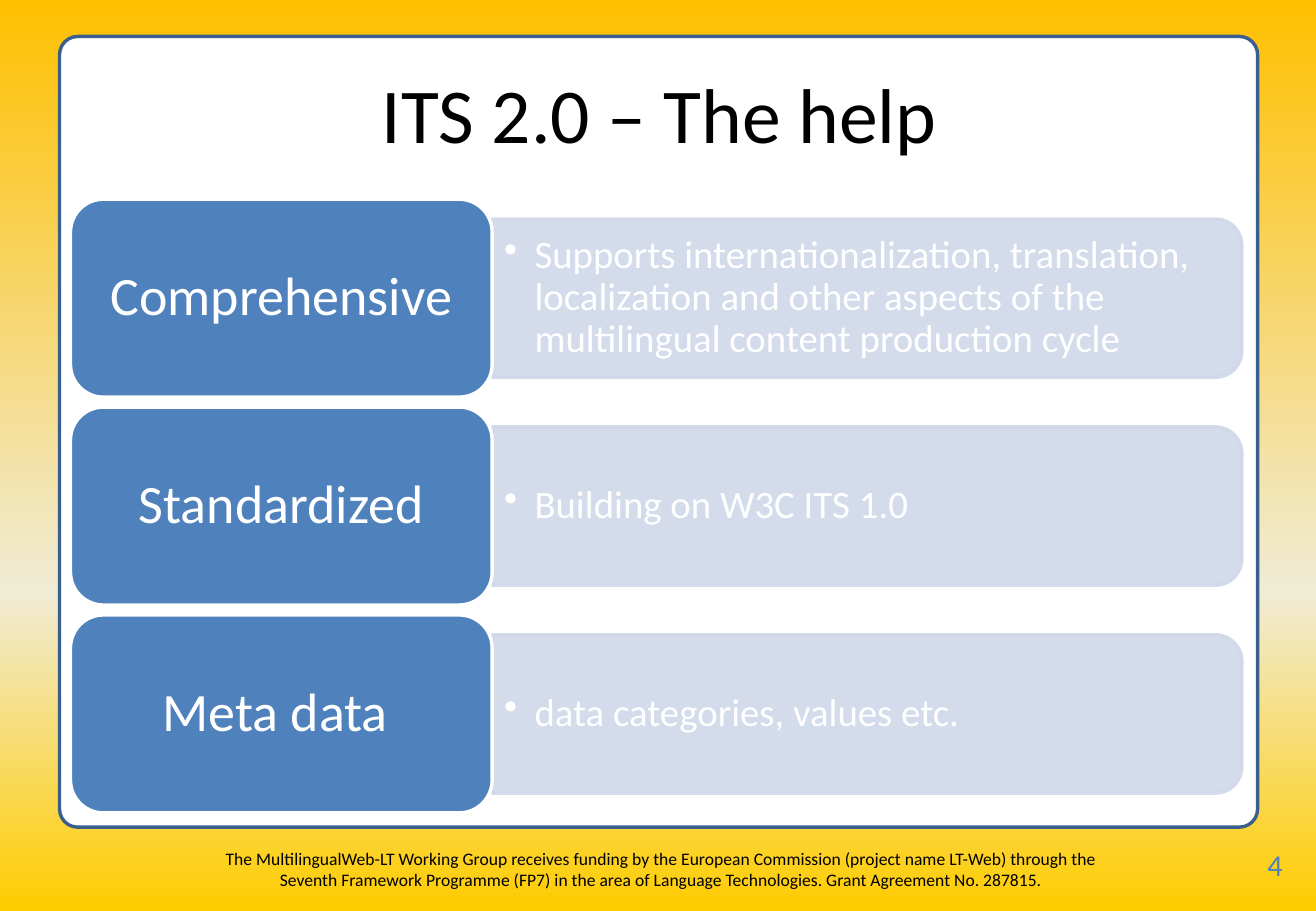
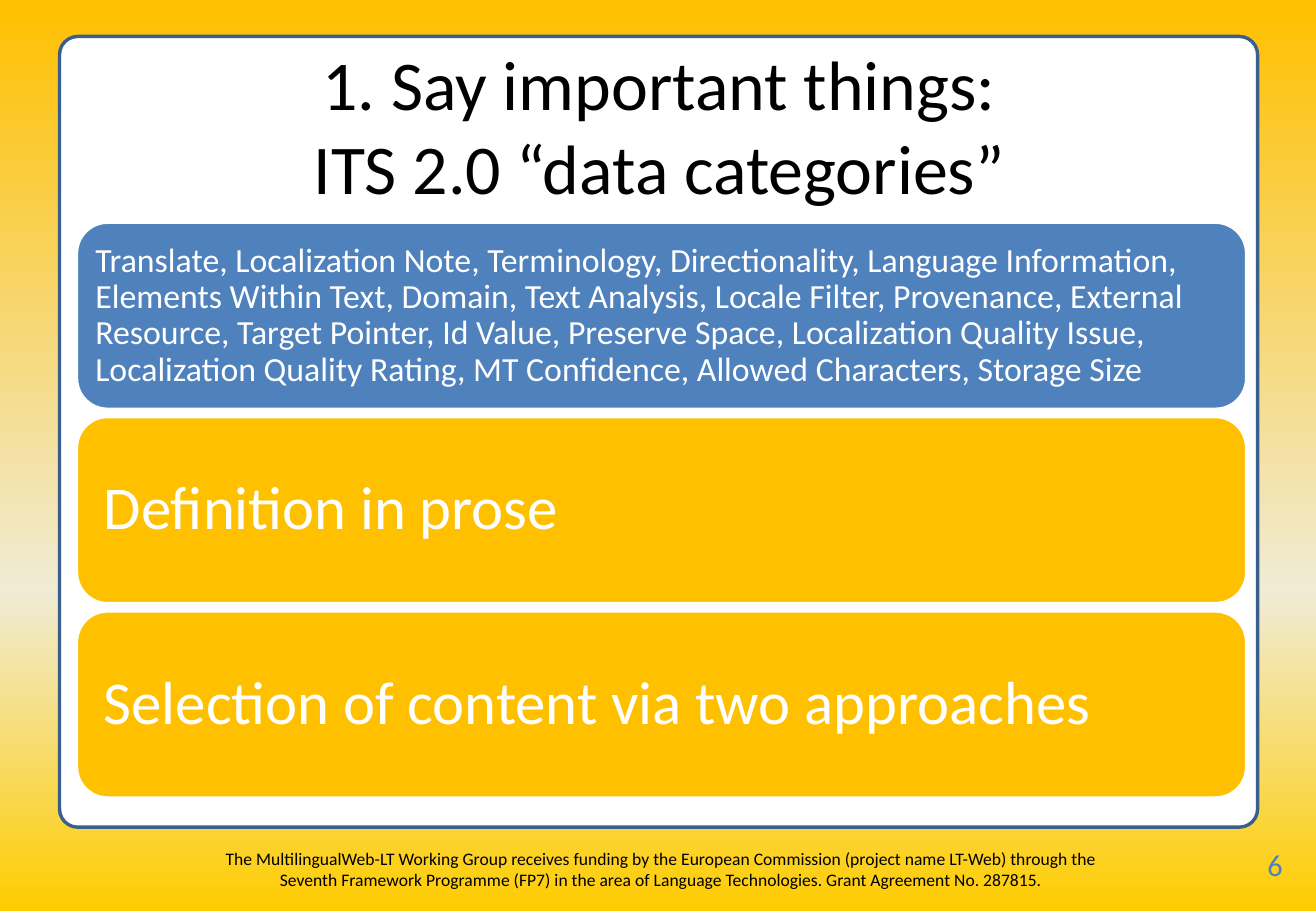
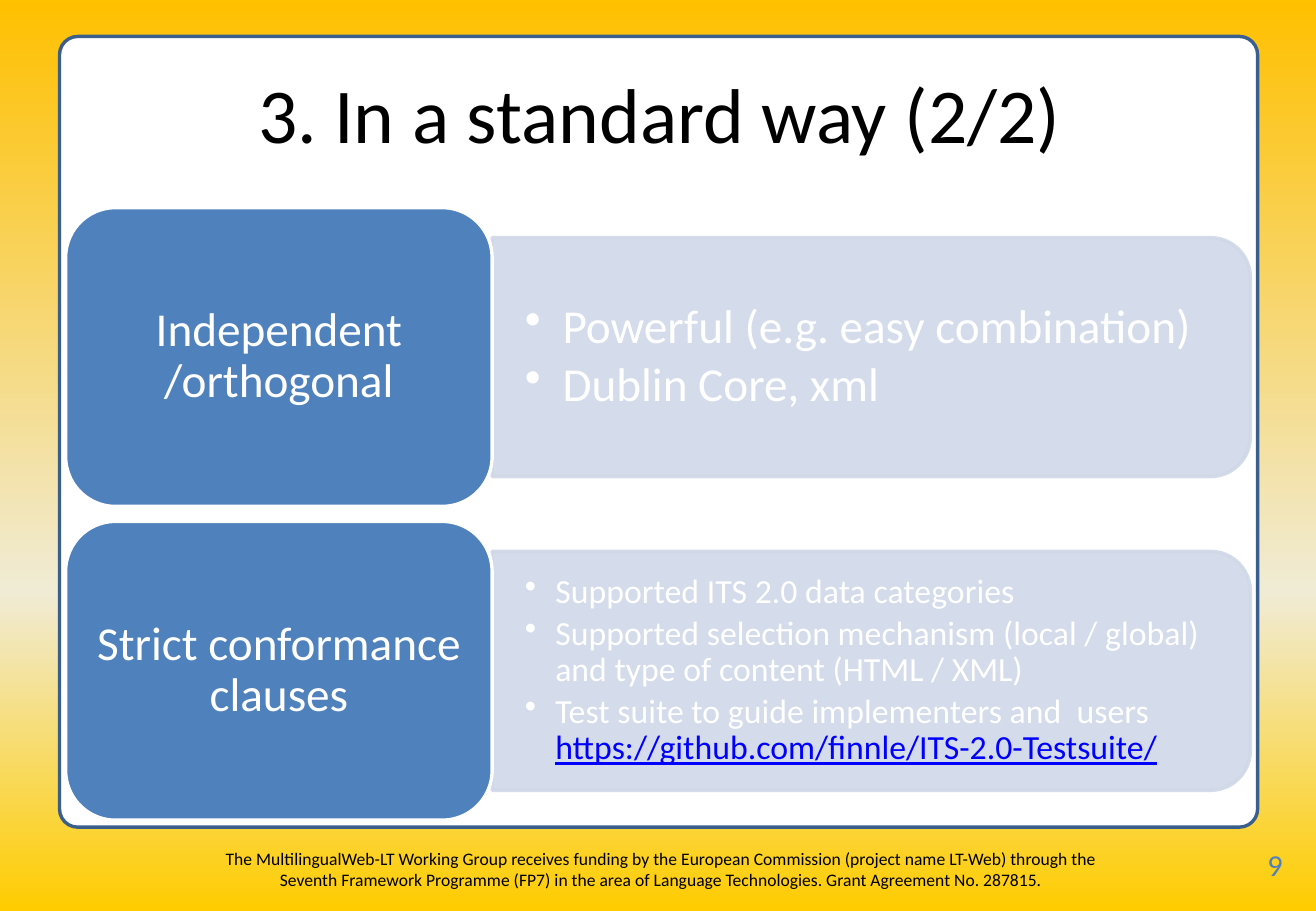
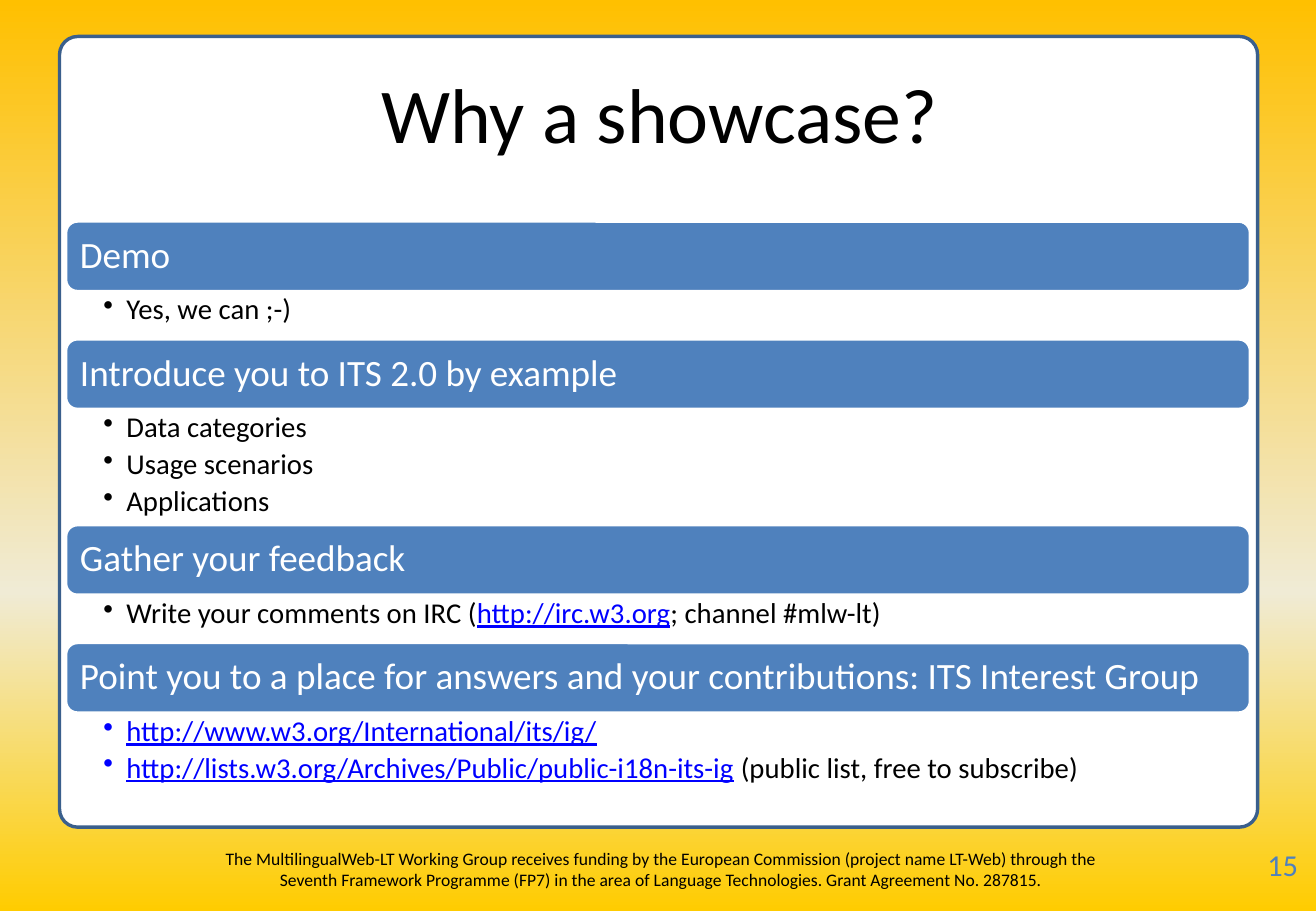
from dataclasses import dataclass

from lxml import etree
from pptx import Presentation
from pptx.dml.color import RGBColor
from pptx.enum.shapes import MSO_SHAPE
from pptx.enum.text import MSO_ANCHOR, PP_ALIGN
from pptx.oxml.ns import qn
from pptx.util import Inches, Pt

ROUNDED = MSO_SHAPE.ROUNDED_RECTANGLE
ROUNDED_TOP = MSO_SHAPE.ROUND_2_SAME_RECTANGLE
CENTER, LEFT = PP_ALIGN.CENTER, PP_ALIGN.LEFT
MIDDLE, TOP = MSO_ANCHOR.MIDDLE, MSO_ANCHOR.TOP


@dataclass(frozen=True)
class Theme:
    font: str = "Calibri"
    black: str = "000000"
    white: str = "FFFFFF"
    blue: str = "4F81BD"
    frame: str = "3A5F8C"
    amber: str = "FFC000"
    pale: str = "D0D8E8"
    link: str = "0000FF"
    backdrop: tuple = ((0, "FFC000"), (65, "F0EBD5"), (100, "FFCC00"))
    pale_opacity: int = 90
    title_size: float = 46
    long_title_size: float = 41.4
    footer_size: float = 10.4
    number_size: float = 18
    line_width: float = 2


THEME = Theme()

# Content: a paragraph is a string or a list of runs
FOOTER = (
    "The MultilingualWeb-LT Working Group receives funding by the European "
    "Commission (project name LT-Web) through the Seventh Framework Programme "
    "(FP7) in the area of Language Technologies. Grant Agreement No. 287815."
)

HELP_ROWS = [
    ("Comprehensive", 23, [
        "Supports internationalization, translation, localization and other "
        "aspects of the multilingual content production cycle"]),
    ("Standardized", 23, ["Building on W3C ITS 1.0"]),
    ("Meta data ", 23, ["data categories, values etc."]),
]

# Text, size, inset, fill
CATEGORY_BLOCKS = [
    ("Translate, Localization Note, Terminology, Directionality, Language "
     "Information, Elements Within Text, Domain, Text Analysis, Locale Filter, "
     "Provenance, External Resource, Target Pointer, Id Value, Preserve Space, "
     "Localization Quality Issue, Localization Quality Rating, MT Confidence, "
     "Allowed Characters, Storage Size", 20, 0.08, THEME.blue),
    ("Definition in prose", 36, 0.15, THEME.amber),
    ("Selection of content via two approaches", 36, 0.15, THEME.amber),
]

STANDARD_ROWS = [
    ("Independent\n/orthogonal", 28, [
        "Powerful (e.g. easy combination)",
        "Dublin Core, xml"]),
    ("Strict conformance clauses", 20, [
        "Supported ITS 2.0 data categories",
        "Supported selection mechanism (local / global) and type of content "
        "(HTML / XML)",
        ["Test suite to guide implementers and  users ",
         "https://github.com/finnle/ITS-2.0-Testsuite/"]]),
]

# Heading, height of the list below it, list
SHOWCASE_SECTIONS = [
    ("Demo", 0.39, ["Yes, we can ;-)"]),
    ("Introduce you to ITS 2.0 by example", 0.95,
     ["Data categories", "Usage scenarios", "Applications"]),
    ("Gather your feedback", 0.39,
     [["Write your comments on IRC (", "http://irc.w3.org",
       "; channel #mlw-lt)"]]),
    ("Point you to a place for answers and your contributions: "
     "ITS Interest Group", 0.63,
     ["http://www.w3.org/International/its/ig/",
      ["http://lists.w3.org/Archives/Public/public-i18n-its-ig",
       " (public list, free to subscribe)"]]),
]


# Drawing helpers
def add_block(slide, kind, box, fill, line, opacity=None):
    shape = slide.shapes.add_shape(kind, *map(Inches, box))
    shape.shadow.inherit = False
    shape.fill.solid()
    shape.fill.fore_color.rgb = RGBColor.from_string(fill)
    shape.line.color.rgb = RGBColor.from_string(line)
    shape.line.width = Pt(THEME.line_width)
    if opacity is not None:
        for color in shape._element.spPr.iter(qn("a:srgbClr")):
            etree.SubElement(color, qn("a:alpha"), val=str(opacity * 1000))
    return shape


def set_bullet(paragraph, indent):
    properties = paragraph._p.get_or_add_pPr()
    properties.set("marL", str(Inches(indent)))
    properties.set("indent", str(-Inches(indent)))
    etree.SubElement(properties, qn("a:buChar"), char="•")


def add_run(paragraph, text, size, color):
    is_link = text.startswith("http")
    run = paragraph.add_run()
    run.text = text
    run.font.color.rgb = RGBColor.from_string(THEME.link if is_link else color)
    values = {"name": THEME.font, "size": Pt(size), "underline": is_link or None}
    for name, value in values.items():
        setattr(run.font, name, value)


def write(shape, paragraphs, size, color, insets=(0.1, 0.05), anchor=MIDDLE,
          align=LEFT, line_spacing=None, after=0, bullet=None):
    """Fill a shape with text; after is a share of the type size."""
    frame = shape.text_frame
    horizontal, vertical = map(Inches, insets)
    frame_format = {
        "word_wrap": True, "vertical_anchor": anchor,
        "margin_left": horizontal, "margin_right": horizontal,
        "margin_top": vertical, "margin_bottom": vertical,
    }
    for name, value in frame_format.items():
        setattr(frame, name, value)
    for index, content in enumerate(paragraphs):
        paragraph = frame.add_paragraph() if index else frame.paragraphs[0]
        if bullet:
            set_bullet(paragraph, bullet)
        paragraph.alignment = align
        paragraph.line_spacing = line_spacing
        paragraph.space_after = Pt(round(size * after, 1))
        for text in [content] if isinstance(content, str) else content:
            for number, part in enumerate(text.split("\n")):
                if number:
                    paragraph.add_line_break()
                add_run(paragraph, part, size, color)


def add_text(slide, box, *args, **options):
    shape = slide.shapes.add_textbox(*map(Inches, box))
    write(shape, *args, **options)
    return shape


# Parts that every slide shares
def set_backdrop(master):
    fill = master.background.fill
    fill.gradient()
    fill.gradient_angle = 270
    stops = master.element.find(".//" + qn("a:gsLst"))
    for stop in list(stops):
        stops.remove(stop)
    for position, color in THEME.backdrop:
        stop = etree.SubElement(stops, qn("a:gs"), pos=str(position * 1000))
        etree.SubElement(stop, qn("a:srgbClr"), val=color)


def add_base(presentation, title, number, title_top=0.3,
             title_size=THEME.title_size):
    slide = presentation.slides.add_slide(presentation.slide_layouts[6])
    card = add_block(slide, ROUNDED, (0.49, 0.3, 9.86, 6.51),
                     THEME.white, THEME.frame)
    card.adjustments[0] = 0.023
    add_text(slide, (1.62, 6.93, 7.64, 0.4), [FOOTER], THEME.footer_size,
             THEME.black, anchor=TOP, align=CENTER)
    add_text(slide, (0.51, title_top, 9.83, 1.25), [title], title_size,
             THEME.black, align=CENTER)
    add_text(slide, (10.41, 6.96, 0.44, 0.4), [str(number)],
             THEME.number_size, THEME.blue, insets=(0.02, 0.01), anchor=TOP)
    return slide


# Slide bodies
def add_label_rows(slide, rows, left, top, width, height, label_size,
                   label_insets, panel_insets):
    """Draw label blocks, each with a pale panel of bullets to its right."""
    label_width, panel_width = 0.36 * width, 0.64 * width
    panel_height = 0.8 * height
    corner = 0.05 * panel_height
    panel_left = left + label_width
    for index, (label, size, bullets) in enumerate(rows):
        row_top = top + index * 1.05 * height
        middle = row_top + height / 2
        # The panel is a tall-corner shape turned a quarter about its centre
        panel = add_block(
            slide, ROUNDED_TOP,
            (panel_left + (panel_width - panel_height) / 2,
             middle - panel_width / 2, panel_height, panel_width),
            THEME.pale, THEME.pale, THEME.pale_opacity)
        panel.rotation = 90
        add_text(slide,
                 (panel_left, middle - panel_height / 2 + corner,
                  panel_width - corner, panel_height - 2 * corner),
                 bullets, size, THEME.white, insets=panel_insets,
                 line_spacing=0.9, after=0.15,
                 bullet=0.31 if size > 25 else 0.25)
        block = add_block(slide, ROUNDED, (left, row_top, label_width, height),
                          THEME.blue, THEME.white)
        write(block, [label], label_size, THEME.white, insets=label_insets,
              align=CENTER, line_spacing=0.9, after=0.35)


def add_category_blocks(slide):
    height, gap = 1.54, 0.06
    for index, (text, size, inset, fill) in enumerate(CATEGORY_BLOCKS):
        box = (0.63, 1.83 + index * (height + gap), 9.63, height)
        block = add_block(slide, ROUNDED, box, fill, THEME.white)
        write(block, [text], size, THEME.white, insets=(inset, inset),
              line_spacing=0.9, after=0.35)


def add_showcase_sections(slide):
    left, top, width, bar_height = 0.54, 1.82, 9.75, 0.58
    for heading, list_height, bullets in SHOWCASE_SECTIONS:
        bar = add_block(slide, ROUNDED, (left, top, width, bar_height),
                        THEME.blue, THEME.white)
        write(bar, [heading], 22, THEME.white, insets=(0.09, 0.09),
              line_spacing=0.9, after=0.35)
        top += bar_height
        add_text(slide, (left, top, width, list_height), bullets, 17,
                 THEME.black, insets=(0.31, 0.03), anchor=TOP,
                 line_spacing=0.9, after=0.2, bullet=0.19)
        top += list_height


def main():
    presentation = Presentation()
    presentation.slide_width = Inches(10.83)
    presentation.slide_height = Inches(7.5)
    set_backdrop(presentation.slide_master)

    slide = add_base(presentation, "ITS 2.0 – The help", 4)
    add_label_rows(slide, HELP_ROWS, 0.58, 1.64, 9.64, 1.63, 32,
                   label_insets=(0.13, 0.07), panel_insets=(0.1, 0.05))

    slide = add_base(presentation,
                     "1. Say important things:\nITS 2.0 “data categories”", 6,
                     title_top=0.4, title_size=THEME.long_title_size)
    add_category_blocks(slide)

    slide = add_base(presentation, "3. In a standard way (2/2)", 9)
    add_label_rows(slide, STANDARD_ROWS, 0.54, 1.71, 9.75, 2.46, 28,
                   label_insets=(0.12, 0.06), panel_insets=(0.27, 0.14))

    slide = add_base(presentation, "Why a showcase?", 15)
    add_showcase_sections(slide)

    presentation.save("out.pptx")


if __name__ == "__main__":
    main()
